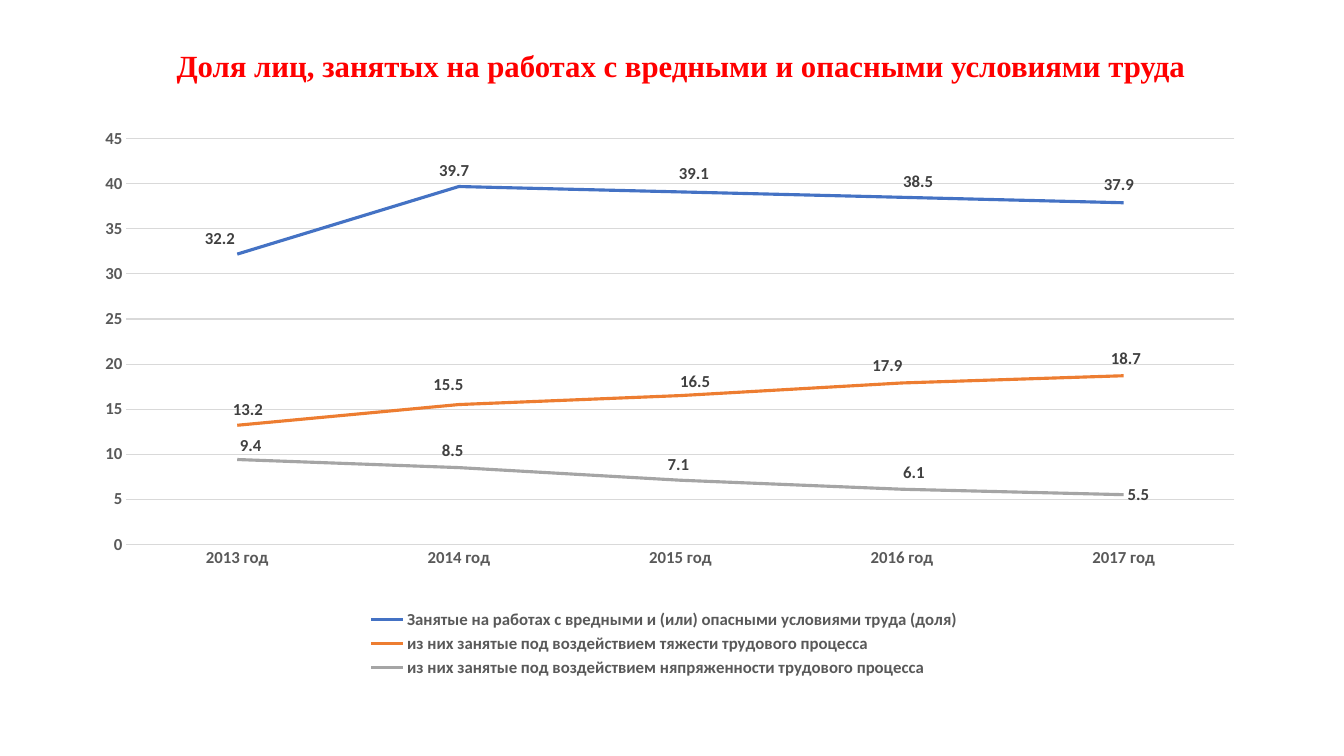
from dataclasses import dataclass

from lxml.etree import SubElement
from pptx import Presentation
from pptx.chart.data import CategoryChartData
from pptx.dml.color import RGBColor
from pptx.enum.chart import (XL_CHART_TYPE, XL_LABEL_POSITION,
                             XL_LEGEND_POSITION, XL_TICK_MARK)
from pptx.enum.text import MSO_ANCHOR, PP_ALIGN
from pptx.oxml.ns import qn
from pptx.util import Pt


@dataclass(frozen=True)
class Theme:
    title_font: str = "Times New Roman"
    chart_font: str = "Calibri"
    title_size: int = 22
    chart_size: int = 12
    title: str = "FF0000"
    axis_text: str = "595959"
    label_text: str = "404040"
    grid: str = "D9D9D9"
    series: tuple = ("4472C4", "ED7D31", "A5A5A5")


THEME = Theme()
TITLE = "Доля лиц, занятых на работах с вредными и опасными условиями труда"
YEARS = [f"{year} год" for year in range(2013, 2018)]
SHARES = {
    "Занятые на работах с вредными и (или) опасными условиями труда (доля)":
        (32.2, 39.7, 39.1, 38.5, 37.9),
    "из них занятые под воздействием тяжести трудового процесса":
        (13.2, 15.5, 16.5, 17.9, 18.7),
    "из них занятые под воздействием няпряженности трудового процесса":
        (9.4, 8.5, 7.1, 6.1, 5.5),
}
# Shift of each label, in points, from its place right of the data point
LABEL_SHIFTS = (
    ((-26, -11), (-17, -11), (-4, -13), (-2, -11), (-17, -13)),
    ((-6, -11), (-21, -14), (-3, -10), (-24, -12), (-12, -12)),
    ((-1, -10), (-15, -12), (-12, -11), (-2, -12), (0, 0)),
)
CHART_LEFT, CHART_TOP, CHART_WIDTH, CHART_HEIGHT = 56, 88, 837.5, 399


def style_font(font, name, size, color):
    font.name = name
    font.size = Pt(size)
    font.bold = True
    font.color.rgb = RGBColor.from_string(color)


def style_chart_font(font, color):
    style_font(font, THEME.chart_font, THEME.chart_size, color)


def style_line(line, color, width):
    line.color.rgb = RGBColor.from_string(color)
    line.width = Pt(width)


def set_manual_layout(layout, **settings):
    manual = SubElement(layout, qn("c:manualLayout"))
    for name, value in settings.items():
        SubElement(manual, qn(f"c:{name}")).set("val", str(value))


def add_title(slide):
    title = slide.shapes.title
    title.left, title.top, title.width, title.height = (
        Pt(67.5), Pt(18.5), Pt(837.5), Pt(59))
    title.text_frame.text = TITLE
    title.text_frame.word_wrap = True
    title.text_frame.vertical_anchor = MSO_ANCHOR.MIDDLE
    paragraph = title.text_frame.paragraphs[0]
    paragraph.alignment = PP_ALIGN.CENTER
    paragraph.line_spacing = 0.9
    style_font(paragraph.font, THEME.title_font, THEME.title_size, THEME.title)


def style_axes(chart):
    for axis in (chart.category_axis, chart.value_axis):
        axis.major_tick_mark = axis.minor_tick_mark = XL_TICK_MARK.NONE
        style_chart_font(axis.tick_labels.font, THEME.axis_text)
    style_line(chart.category_axis.format.line, THEME.grid, 0.75)
    value_axis = chart.value_axis
    value_axis.minimum_scale, value_axis.maximum_scale = 0, 45
    value_axis.major_unit = 5
    value_axis.format.line.fill.background()
    style_line(value_axis.major_gridlines.format.line, THEME.grid, 0.75)


def add_label(point, shift):
    label = point.data_label
    style_chart_font(label.font, THEME.label_text)
    label.position = XL_LABEL_POSITION.RIGHT


def style_series(series, color, shifts):
    series.smooth = False
    style_line(series.format.line, color, 2.25)
    labels = series.data_labels
    labels.show_value = True
    labels.position = XL_LABEL_POSITION.RIGHT
    style_chart_font(labels.font, THEME.label_text)
    for index, shift in enumerate(shifts):
        add_label(series.points[index], shift)
    label_elements = labels._element.findall(qn("c:dLbl"))
    for element, (across, down) in zip(label_elements, shifts):
        layout = SubElement(element, qn("c:layout"))
        element.find(qn("c:idx")).addnext(layout)
        set_manual_layout(layout, x=round(across / CHART_WIDTH, 4),
                          y=round(down / CHART_HEIGHT, 4))


def place_plot(chart):
    plot_area = chart._chartSpace.chart.plotArea
    layout = plot_area.find(qn("c:layout"))
    if layout is None:
        layout = SubElement(plot_area, qn("c:layout"))
        plot_area.insert(0, layout)
    set_manual_layout(layout, layoutTarget="inner", xMode="edge", yMode="edge",
                      x=0.041, y=0.028, w=0.945, h=0.726)


def add_share_chart(slide):
    data = CategoryChartData()
    data.categories = YEARS
    for name, values in SHARES.items():
        data.add_series(name, values)
    chart = slide.shapes.add_chart(
        XL_CHART_TYPE.LINE, Pt(CHART_LEFT), Pt(CHART_TOP),
        Pt(CHART_WIDTH), Pt(CHART_HEIGHT), data).chart
    chart.has_title = False
    style_chart_font(chart.font, "000000")
    chart.plots[0].vary_by_categories = False
    style_axes(chart)
    place_plot(chart)
    for series, color, shifts in zip(chart.series, THEME.series, LABEL_SHIFTS):
        style_series(series, color, shifts)
    chart.has_legend = True
    chart.legend.position = XL_LEGEND_POSITION.BOTTOM
    chart.legend.include_in_layout = False
    style_chart_font(chart.legend.font, THEME.axis_text)


def main():
    presentation = Presentation()
    presentation.slide_width, presentation.slide_height = Pt(960), Pt(540)
    slide = presentation.slides.add_slide(presentation.slide_layouts[5])
    add_title(slide)
    add_share_chart(slide)
    presentation.save("out.pptx")


if __name__ == "__main__":
    main()
